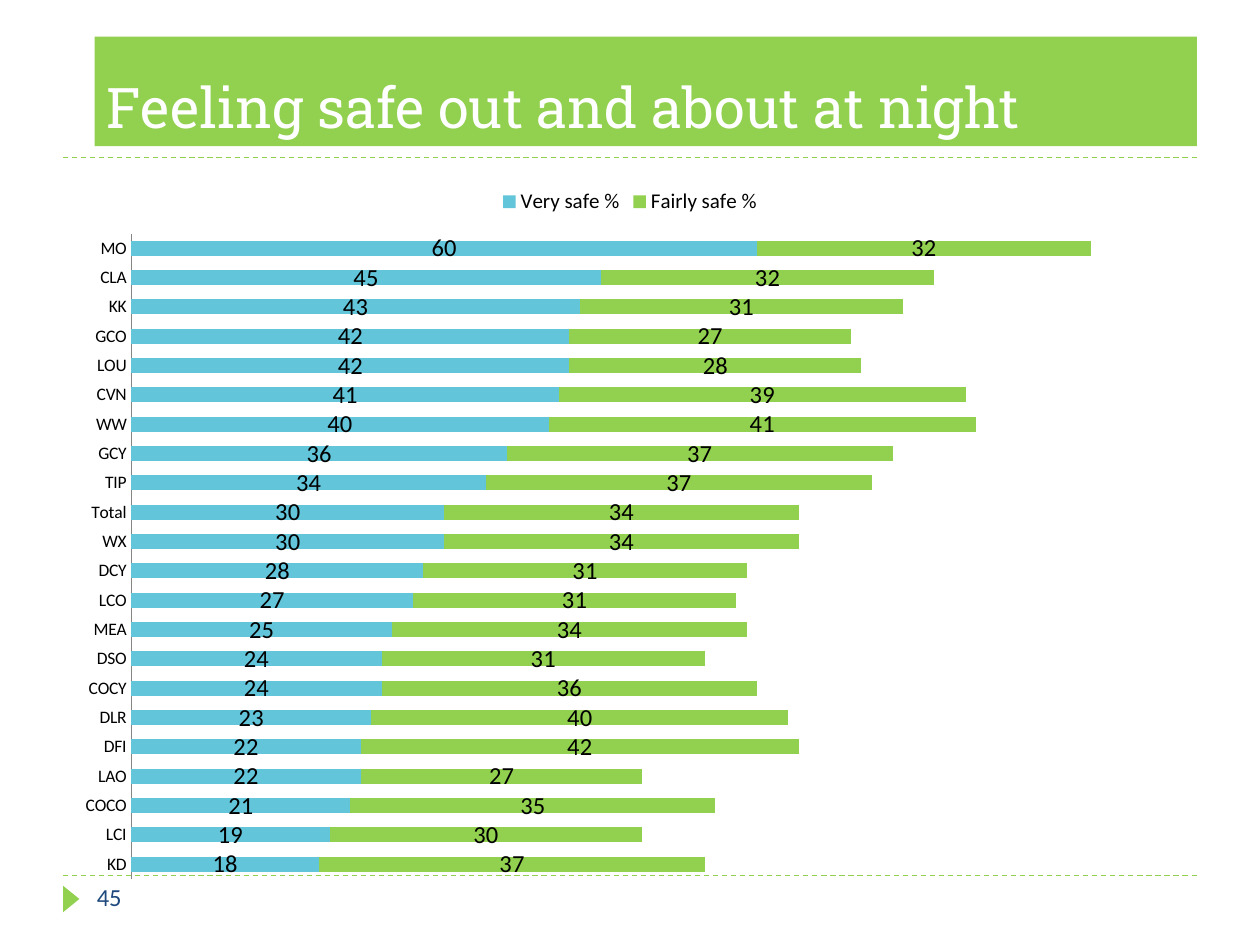
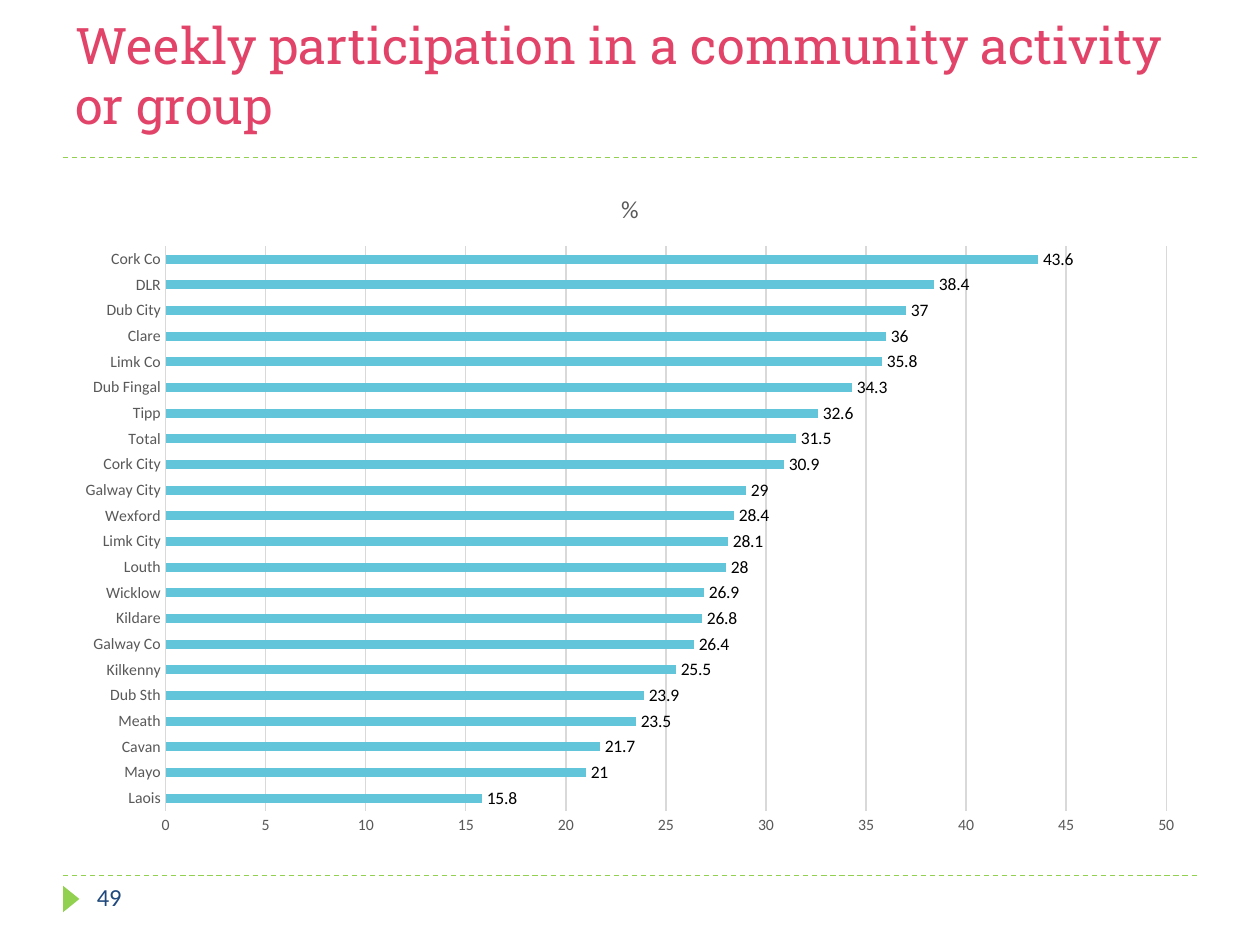
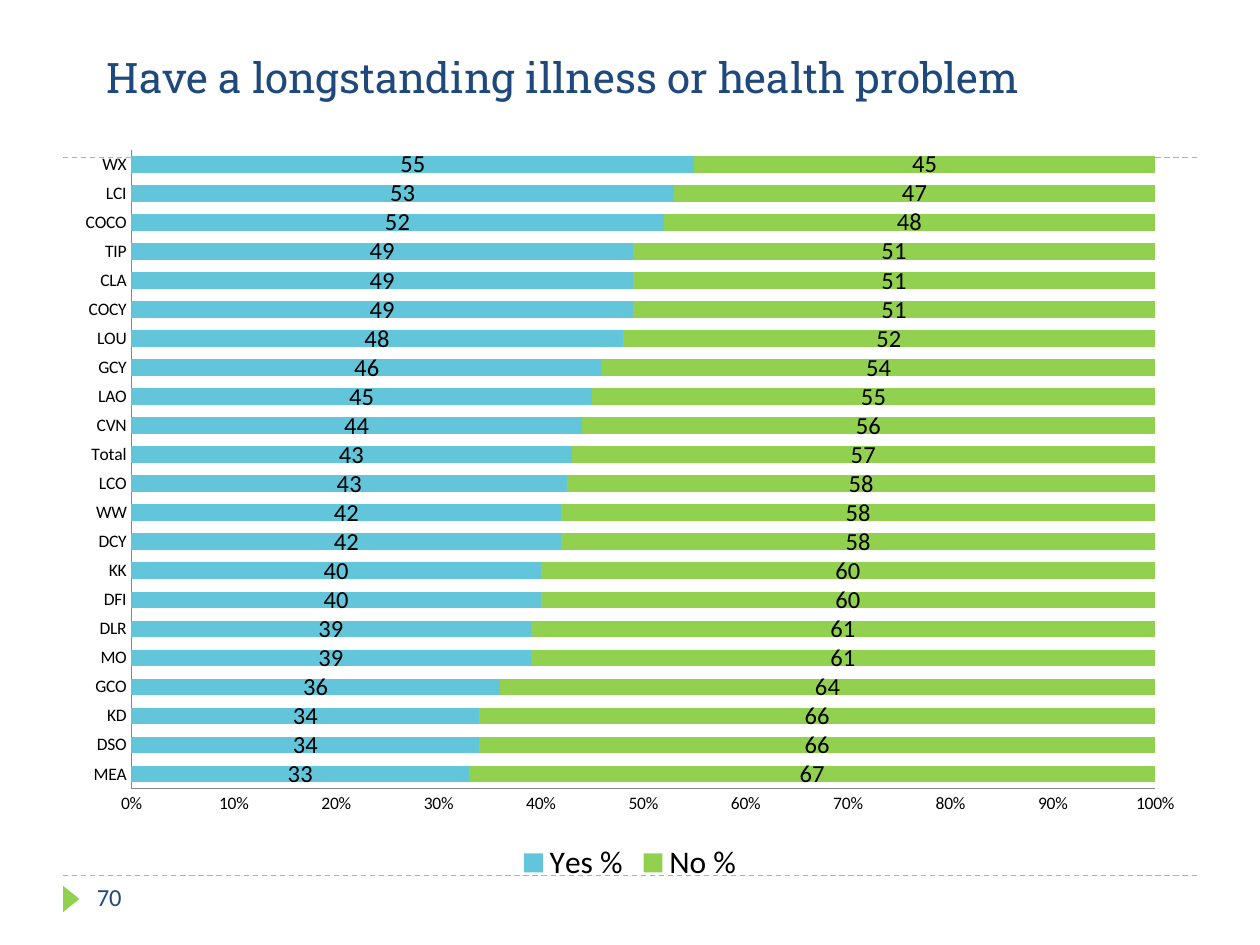
import pptx
import pptx.chart.data
import pptx.dml.color
import pptx.enum.chart
import pptx.enum.dml
import pptx.enum.shapes
import pptx.enum.text
import pptx.oxml.xmlchemy
import pptx.util
from lxml import etree

Inches = pptx.util.Inches
Pt = pptx.util.Pt
RGBColor = pptx.dml.color.RGBColor
ChartType = pptx.enum.chart.XL_CHART_TYPE
LegendPosition = pptx.enum.chart.XL_LEGEND_POSITION
LabelPosition = pptx.enum.chart.XL_LABEL_POSITION

# Shared colours and fonts
GREEN = RGBColor(0x92, 0xD0, 0x50)
BLUE = RGBColor(0x63, 0xC5, 0xDA)
NAVY = RGBColor(0x1F, 0x49, 0x7D)
PINK = RGBColor(0xE2, 0x43, 0x68)
WHITE = RGBColor(0xFF, 0xFF, 0xFF)
BLACK = RGBColor(0, 0, 0)
DARK_GREY = RGBColor(0x59, 0x59, 0x59)
AXIS_GREY = RGBColor(0x86, 0x86, 0x86)
LIGHT_GREY = RGBColor(0xD9, 0xD9, 0xD9)
TITLE_FONT = "Roboto Slab"
BODY_FONT = "Calibri"

# Frame between the two dashed rules: left, top, width, height
FRAME = (0.5, 1.25, 9, 5.7)
DRAWING_NS = "http://schemas.openxmlformats.org/drawingml/2006/main"

# Areas from the bottom bar to the top bar
SAFE_AREAS = ["KD", "LCI", "COCO", "LAO", "DFI", "DLR", "COCY", "DSO", "MEA", "LCO", "DCY",
              "WX", "Total", "TIP", "GCY", "WW", "CVN", "LOU", "GCO", "KK", "CLA", "MO"]
SAFE_SERIES = {
    "Very safe %": [18, 19, 21, 22, 22, 23, 24, 24, 25, 27, 28,
                    30, 30, 34, 36, 40, 41, 42, 42, 43, 45, 60],
    "Fairly safe %": [37, 30, 35, 27, 42, 40, 36, 31, 34, 31, 31,
                      34, 34, 37, 37, 41, 39, 28, 27, 31, 32, 32],
}
ACTIVITY_AREAS = ["Laois", "Mayo", "Cavan", "Meath", "Dub Sth", "Kilkenny", "Galway Co",
                  "Kildare", "Wicklow", "Louth", "Limk City", "Wexford", "Galway City",
                  "Cork City", "Total", "Tipp", "Dub Fingal", "Limk Co", "Clare",
                  "Dub City", "DLR", "Cork Co"]
ACTIVITY_SERIES = {
    "%": [15.8, 21, 21.7, 23.5, 23.9, 25.5, 26.4, 26.8, 26.9, 28, 28.1,
          28.4, 29, 30.9, 31.5, 32.6, 34.3, 35.8, 36, 37, 38.4, 43.6],
}
ILLNESS_AREAS = ["MEA", "DSO", "KD", "GCO", "MO", "DLR", "DFI", "KK", "DCY", "WW", "LCO",
                 "Total", "CVN", "LAO", "GCY", "LOU", "COCY", "CLA", "TIP", "COCO", "LCI", "WX"]
ILLNESS_SERIES = {
    "Yes %": [33, 34, 34, 36, 39, 39, 40, 40, 42, 42, 43,
              43, 44, 45, 46, 48, 49, 49, 49, 52, 53, 55],
    "No %": [67, 66, 66, 64, 61, 61, 60, 60, 58, 58, 58,
             57, 56, 55, 54, 52, 51, 51, 51, 48, 47, 45],
}


def set_font(font, size, color, name=BODY_FONT):
    font.size, font.name, font.bold = Pt(size), name, False
    font.color.rgb = color


def add_text(slide, box, text, size, color, font_name, anchor, fill=None):
    holder = slide.shapes.add_textbox(*map(Inches, box))
    if fill is not None:
        holder.fill.solid()
        holder.fill.fore_color.rgb = fill
    frame = holder.text_frame
    frame.word_wrap = True
    frame.vertical_anchor = anchor
    frame.text = text
    set_font(frame.paragraphs[0].runs[0].font, size, color, font_name)


def add_title(slide, box, text, size, color, fill=None):
    add_text(slide, box, text, size, color, TITLE_FONT,
             pptx.enum.text.MSO_ANCHOR.BOTTOM, fill)


def add_frame(slide, box, page):
    """Dashed rules above and below the box, page marker and number under it."""
    left, top, width, height = box
    bottom = top + height
    for y in (bottom, top):
        rule = slide.shapes.add_connector(
            pptx.enum.shapes.MSO_CONNECTOR.STRAIGHT,
            Inches(left), Inches(y), Inches(left + width), Inches(y))
        rule.line.color.rgb = GREEN
        rule.line.width = Pt(0.75)
        rule.line.dash_style = pptx.enum.dml.MSO_LINE.DASH
        etree.SubElement(rule._element.spPr, f"{{{DRAWING_NS}}}effectLst")
    marker = slide.shapes.add_shape(
        pptx.enum.shapes.MSO_SHAPE.ISOSCELES_TRIANGLE,
        Inches(left - 0.04), Inches(bottom + 0.12), Inches(0.21), Inches(0.13))
    marker.rotation = 90
    marker.shadow.inherit = False
    marker.fill.solid()
    marker.fill.fore_color.rgb = GREEN
    marker.line.fill.background()
    add_text(slide, (left + 0.17, bottom, 2.17, 0.4), page, 14, NAVY, BODY_FONT,
             pptx.enum.text.MSO_ANCHOR.TOP)


def style_axis(axis, size, color, line_color=None):
    axis.has_major_gridlines = False
    axis.major_tick_mark = axis.minor_tick_mark = pptx.enum.chart.XL_TICK_MARK.NONE
    set_font(axis.tick_labels.font, size, color)
    if line_color is None:
        axis.format.line.fill.background()
    else:
        axis.format.line.color.rgb = line_color
        axis.format.line.width = Pt(0.75)


def add_bars(slide, box, kind, areas, series, gap, label_size, label_format):
    """Bar chart with a value on every bar."""
    data = pptx.chart.data.CategoryChartData()
    data.categories = areas
    for name, values in series.items():
        data.add_series(name, values)
    chart = slide.shapes.add_chart(kind, *map(Inches, box), data).chart
    set_font(chart.font, 10, BLACK)
    chart.has_title = chart.has_legend = False
    plot = chart.plots[0]
    plot.gap_width = gap
    plot.vary_by_categories = False
    for bars, color in zip(plot.series, (BLUE, GREEN)):
        bars.format.fill.solid()
        bars.format.fill.fore_color.rgb = color
        bars.invert_if_negative = False
        labels = bars.data_labels
        labels.show_value = True
        labels.number_format = label_format
        labels.number_format_is_linked = False
        set_font(labels.font, label_size, BLACK)
    return chart


def add_stacked_bars(slide, box, kind, areas, series, gap, legend_position, legend_size):
    chart = add_bars(slide, box, kind, areas, series, gap, 14, "#,##0")
    chart.plots[0].overlap = 100
    for axis in (chart.category_axis, chart.value_axis):
        style_axis(axis, 10, BLACK, AXIS_GREY)
    chart.has_legend = True
    chart.legend.position = legend_position
    chart.legend.include_in_layout = False
    set_font(chart.legend.font, legend_size, BLACK)
    return chart


def add_single_bars(slide, box, areas, series, heading):
    chart = add_bars(slide, box, ChartType.BAR_CLUSTERED, areas, series, 182, 10, "General")
    chart.plots[0].series[0].data_labels.position = LabelPosition.OUTSIDE_END
    chart.has_title = True
    chart.chart_title.include_in_layout = False
    chart.chart_title.text_frame.text = heading
    set_font(chart.chart_title.text_frame.paragraphs[0].runs[0].font, 14, DARK_GREY)
    style_axis(chart.category_axis, 9, DARK_GREY, LIGHT_GREY)
    scale = chart.value_axis
    style_axis(scale, 9, DARK_GREY)
    scale.minimum_scale, scale.maximum_scale, scale.major_unit = 0, 50, 5
    scale.has_major_gridlines = True
    scale.major_gridlines.format.line.color.rgb = LIGHT_GREY
    scale.major_gridlines.format.line.width = Pt(0.75)


def build_safety(slide, box):
    left, top, width, height = box
    add_frame(slide, box, "45")
    add_title(slide, (left + 0.25, top - 0.96, width - 0.25, 0.87),
              "Feeling safe out and about at night", 32, WHITE, GREEN)
    chart = add_stacked_bars(slide, (left, top + 0.14, width, height),
                             ChartType.BAR_STACKED, SAFE_AREAS, SAFE_SERIES, 95,
                             LegendPosition.TOP, 12)
    chart.value_axis.minimum_scale, chart.value_axis.maximum_scale = 0, 100
    chart.value_axis.visible = False


def build_activity(slide, box):
    left, top, width, height = box
    add_frame(slide, box, "49")
    add_title(slide, (left, top - 1.08, width, 0.95),
              "Weekly participation in a community activity or group", 28.8, PINK, WHITE)
    add_single_bars(slide, (left, top + 0.08, width, height - 0.3),
                    ACTIVITY_AREAS, ACTIVITY_SERIES, "%")


def build_illness(slide, box):
    left, top, width, height = box
    add_frame(slide, box, "70")
    add_title(slide, (left + 0.25, top - 1.04, width - 0.41, 0.65),
              "Have a longstanding illness or health problem", 24, NAVY)
    chart = add_stacked_bars(slide, (left, top - 0.18, width, height + 0.28),
                             ChartType.BAR_STACKED_100, ILLNESS_AREAS, ILLNESS_SERIES, 75,
                             LegendPosition.BOTTOM, 18)
    chart.value_axis.tick_labels.number_format = "0%"
    chart.value_axis.tick_labels.number_format_is_linked = False


def main():
    deck = pptx.Presentation()
    deck.slide_width, deck.slide_height = Inches(10), Inches(7.5)
    for build in (build_safety, build_activity, build_illness):
        build(deck.slides.add_slide(deck.slide_layouts[6]), FRAME)
    deck.save("out.pptx")


if __name__ == "__main__":
    main()
